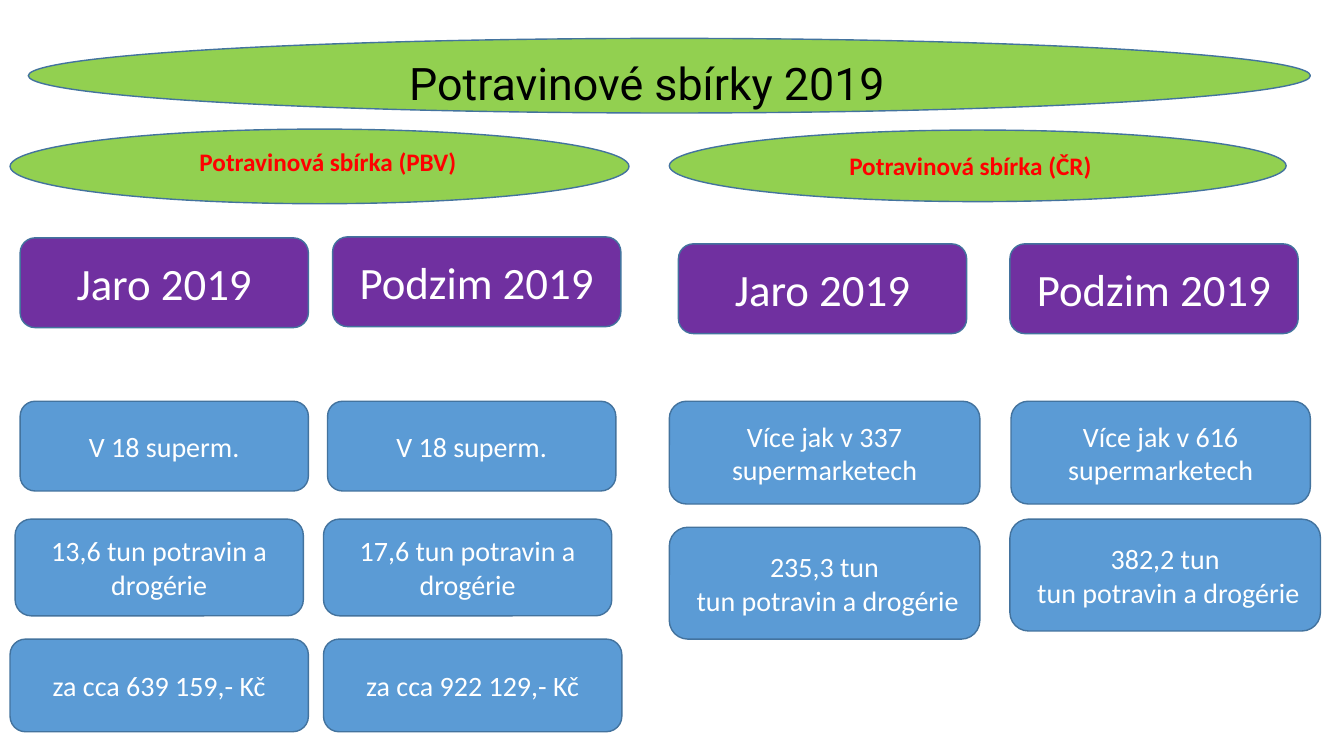
import dataclasses

import pptx
import pptx.dml.color
import pptx.enum.shapes
import pptx.enum.text
import pptx.shapes.autoshape
import pptx.slide
import pptx.text.text
import pptx.util

Pt = pptx.util.Pt
RGB = pptx.dml.color.RGBColor
KIND = pptx.enum.shapes.MSO_SHAPE
ALIGN = pptx.enum.text.PP_ALIGN
ANCHOR = pptx.enum.text.MSO_ANCHOR

GREEN = RGB(0x92, 0xD0, 0x50)
PURPLE = RGB(0x70, 0x30, 0xA0)
BLUE = RGB(0x5B, 0x9B, 0xD5)
EDGE = RGB(0x43, 0x73, 0x9E)
WHITE = RGB(0xFF, 0xFF, 0xFF)
BLACK = RGB(0, 0, 0)
RED = RGB(0xFF, 0, 0)


@dataclasses.dataclass(frozen=True)
class Box:
    left: float
    top: float
    width: float
    height: float


@dataclasses.dataclass(frozen=True)
class Font:
    size: float
    color: RGB
    name: str = "Calibri"
    bold: bool = False


@dataclasses.dataclass(frozen=True)
class Card:
    box: Box
    text: str


HEAD = Font(32, BLACK, "Roboto")
LABEL = Font(18, RED, bold=True)
SEASON = Font(32, WHITE)
FACT = Font(20, WHITE)

# Green ovals: title, regional drive, national drive
TITLE = Box(20.2, 27.4, 915.8, 53.3)
REGION = Box(7.2, 92.2, 442.1, 53.3)
NATION = Box(478.1, 92.9, 440.6, 51.1)

# Season headings share one size
SEASONS = [
    Card(Box(left, top, 205.9, 64.1), text)
    for left, top, text in (
        (14.4, 169.9, "Jaro 2019"),
        (237.6, 169.2, "Podzim 2019"),
        (484.6, 174.2, "Jaro 2019"),
        (721.4, 174.2, "Podzim 2019"),
    )
]

# Facts: shops, weight, value
FACTS = [
    Card(Box(14.4, 286.6, 205.9, 64.1), "V 18 superm."),
    Card(Box(234, 286.6, 205.9, 64.1), "V 18 superm."),
    Card(Box(478.1, 286.6, 221.8, 73.4), "Více jak v 337 supermarketech"),
    Card(Box(722.2, 286.6, 213.8, 73.4), "Více jak v 616 supermarketech"),
    Card(Box(10.8, 370.8, 205.9, 69.1), "13,6 tun potravin a drogérie"),
    Card(Box(231.1, 370.8, 205.9, 69.1), "17,6 tun potravin a drogérie"),
    Card(Box(478.1, 376.6, 221.8, 79.9), "235,3 tun\n tun potravin a drogérie"),
    Card(Box(721.4, 370.8, 221.8, 79.9), "382,2 tun\n tun potravin a drogérie"),
    Card(Box(7.2, 456.5, 213.1, 66.2), "za cca 639 159,- Kč"),
    Card(Box(231.1, 456.5, 213.1, 66.2), "za cca 922 129,- Kč"),
]


def place(box: Box) -> tuple[Pt, Pt, Pt, Pt]:
    return Pt(box.left), Pt(box.top), Pt(box.width), Pt(box.height)


def write(frame: pptx.text.text.TextFrame, text: str, font: Font, align: ALIGN) -> None:
    frame.word_wrap = True
    frame.text = text
    for para in frame.paragraphs:
        para.alignment = align
        for run in para.runs:
            run.font.name = font.name
            run.font.size = Pt(font.size)
            run.font.bold = font.bold
            run.font.color.rgb = font.color


def draw(
    slide: pptx.slide.Slide, kind: KIND, box: Box, fill: RGB
) -> pptx.shapes.autoshape.Shape:
    shape = slide.shapes.add_shape(kind, *place(box))
    shape.shadow.inherit = False
    shape.fill.solid()
    shape.fill.fore_color.rgb = fill
    shape.line.color.rgb = EDGE
    shape.line.width = Pt(1)
    return shape


def label(slide: pptx.slide.Slide, box: Box, text: str, font: Font) -> None:
    area = slide.shapes.add_textbox(*place(box))
    write(area.text_frame, text, font, ALIGN.LEFT)


def cards(slide: pptx.slide.Slide, items: list[Card], fill: RGB, font: Font) -> None:
    for card in items:
        shape = draw(slide, KIND.ROUNDED_RECTANGLE, card.box, fill)
        shape.text_frame.vertical_anchor = ANCHOR.MIDDLE
        write(shape.text_frame, card.text, font, ALIGN.CENTER)


def main() -> None:
    deck = pptx.Presentation()
    deck.slide_width, deck.slide_height = Pt(960), Pt(540)
    slide = deck.slides.add_slide(deck.slide_layouts[6])

    # Title and regional drive, with text boxes over the ovals
    draw(slide, KIND.OVAL, TITLE, GREEN).rotation = 180
    label(slide, Box(285.1, 36, 450, 85), "Potravinové sbírky 2019", HEAD)
    draw(slide, KIND.OVAL, REGION, GREEN).rotation = 180
    label(slide, Box(135.4, 100.8, 267.8, 28.8), "Potravinová sbírka (PBV)", LABEL)

    # National drive, with its text inside the oval
    oval = draw(slide, KIND.OVAL, NATION, GREEN)
    oval.text_frame.margin_left = Pt(64)
    oval.text_frame.vertical_anchor = ANCHOR.MIDDLE
    write(oval.text_frame, "Potravinová sbírka (ČR)", LABEL, ALIGN.LEFT)

    # Cards
    cards(slide, SEASONS, PURPLE, SEASON)
    cards(slide, FACTS, BLUE, FACT)

    deck.save("out.pptx")


if __name__ == "__main__":
    main()
